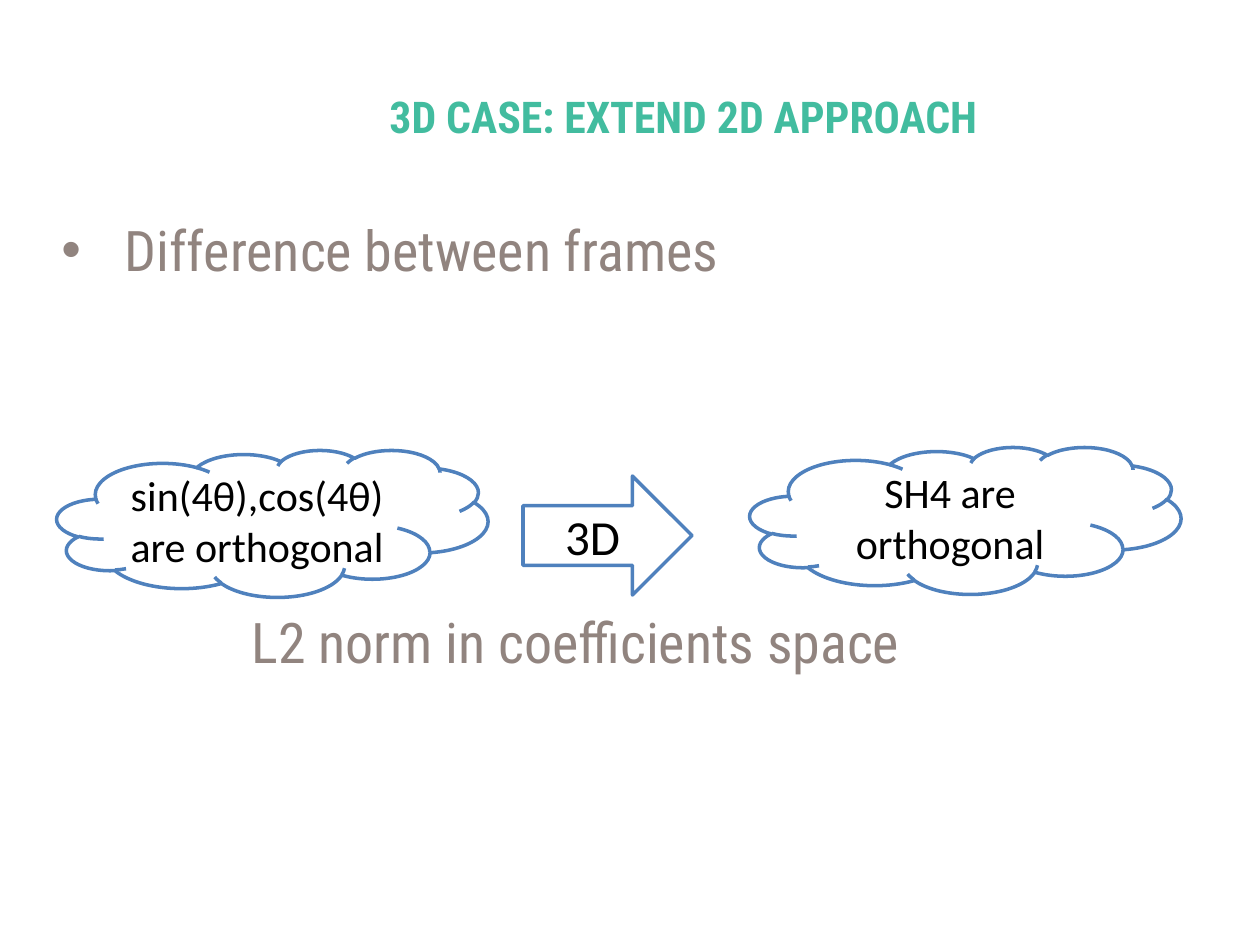
from dataclasses import dataclass

from lxml import etree
from pptx import Presentation
from pptx.dml.color import RGBColor
from pptx.enum.shapes import MSO_SHAPE
from pptx.enum.text import MSO_ANCHOR, PP_ALIGN
from pptx.oxml.ns import qn
from pptx.util import Pt

CLOUD = MSO_SHAPE.CLOUD
ARROW = MSO_SHAPE.RIGHT_ARROW
MIDDLE, TOP = MSO_ANCHOR.MIDDLE, MSO_ANCHOR.TOP
CENTER = PP_ALIGN.CENTER
SCALE = 914400 / 126


@dataclass(frozen=True)
class Theme:
    head: str = "Roboto Condensed"
    body: str = "Calibri"
    green: str = "42BC9F"
    gray: str = "91847F"
    black: str = "000000"
    white: str = "FFFFFF"
    blue: str = "4F81BD"
    title: int = 25
    point: int = 32
    cloud: int = 24
    arrow: int = 28
    line: int = 2


@dataclass(frozen=True)
class Box:
    left: int
    top: int
    width: int
    height: int


@dataclass(frozen=True)
class Label:
    box: Box
    text: str
    size: int
    color: str
    bold: bool = False
    anchor: int = TOP
    indent: int = 0


@dataclass(frozen=True)
class Node:
    kind: int
    box: Box
    lines: tuple[str, ...]
    size: int


THEME = Theme()
LABELS = (
    Label(Box(377, 77, 840, 78), "3D CASE: EXTEND 2D APPROACH",
          THEME.title, THEME.green, True, MIDDLE),
    Label(Box(49, 209, 1167, 80), "Difference between frames",
          THEME.point, THEME.gray, indent=63),
    Label(Box(239, 601, 977, 80), "L2 norm in coefficients space",
          THEME.point, THEME.gray),
)
NODES = (
    Node(CLOUD, Box(57, 450, 431, 147),
         ("sin(4θ),cos(4θ)", "are orthogonal"), THEME.cloud),
    Node(ARROW, Box(523, 476, 169, 119), ("3D",), THEME.arrow),
    Node(CLOUD, Box(750, 447, 431, 147), ("SH4 are orthogonal",), THEME.cloud),
)


def emu(px: int) -> int:
    return round(px * SCALE)


def place(box: Box) -> tuple[int, ...]:
    return tuple(map(emu, (box.left, box.top, box.width, box.height)))


def style(para, face: str, size: int, color: str, bold: bool = False) -> None:
    font = para.font
    font.name, font.size, font.bold = face, Pt(size), bold
    font.color.rgb = RGBColor.from_string(color)


def add_dot(para, indent: int) -> None:
    """Give the paragraph a round bullet with a hanging indent."""
    props = para._p.get_or_add_pPr()
    props.set("marL", str(emu(indent)))
    props.set("indent", str(-emu(indent)))
    etree.SubElement(props, qn("a:buFont")).set("typeface", "Arial")
    etree.SubElement(props, qn("a:buChar")).set("char", "•")


def add_label(slide, label: Label) -> None:
    frame = slide.shapes.add_textbox(*place(label.box)).text_frame
    frame.word_wrap = True
    frame.vertical_anchor = label.anchor
    para = frame.paragraphs[0]
    para.text = label.text
    if label.indent:
        add_dot(para, label.indent)
    style(para, THEME.head, label.size, label.color, label.bold)


def add_node(slide, node: Node) -> None:
    shape = slide.shapes.add_shape(node.kind, *place(node.box))
    shape.shadow.inherit = False
    shape.fill.solid()
    shape.fill.fore_color.rgb = RGBColor.from_string(THEME.white)
    shape.line.color.rgb = RGBColor.from_string(THEME.blue)
    shape.line.width = Pt(THEME.line)
    frame = shape.text_frame
    frame.word_wrap = True
    frame.vertical_anchor = MIDDLE
    frame.text = "\n".join(node.lines)
    for para in frame.paragraphs:
        para.alignment = CENTER
        style(para, THEME.body, node.size, THEME.black)


def main() -> None:
    deck = Presentation()
    deck.slide_width, deck.slide_height = emu(1260), emu(945)
    slide = deck.slides.add_slide(deck.slide_layouts[6])
    for label in LABELS:
        add_label(slide, label)
    for node in NODES:
        add_node(slide, node)
    deck.save("out.pptx")


if __name__ == "__main__":
    main()
